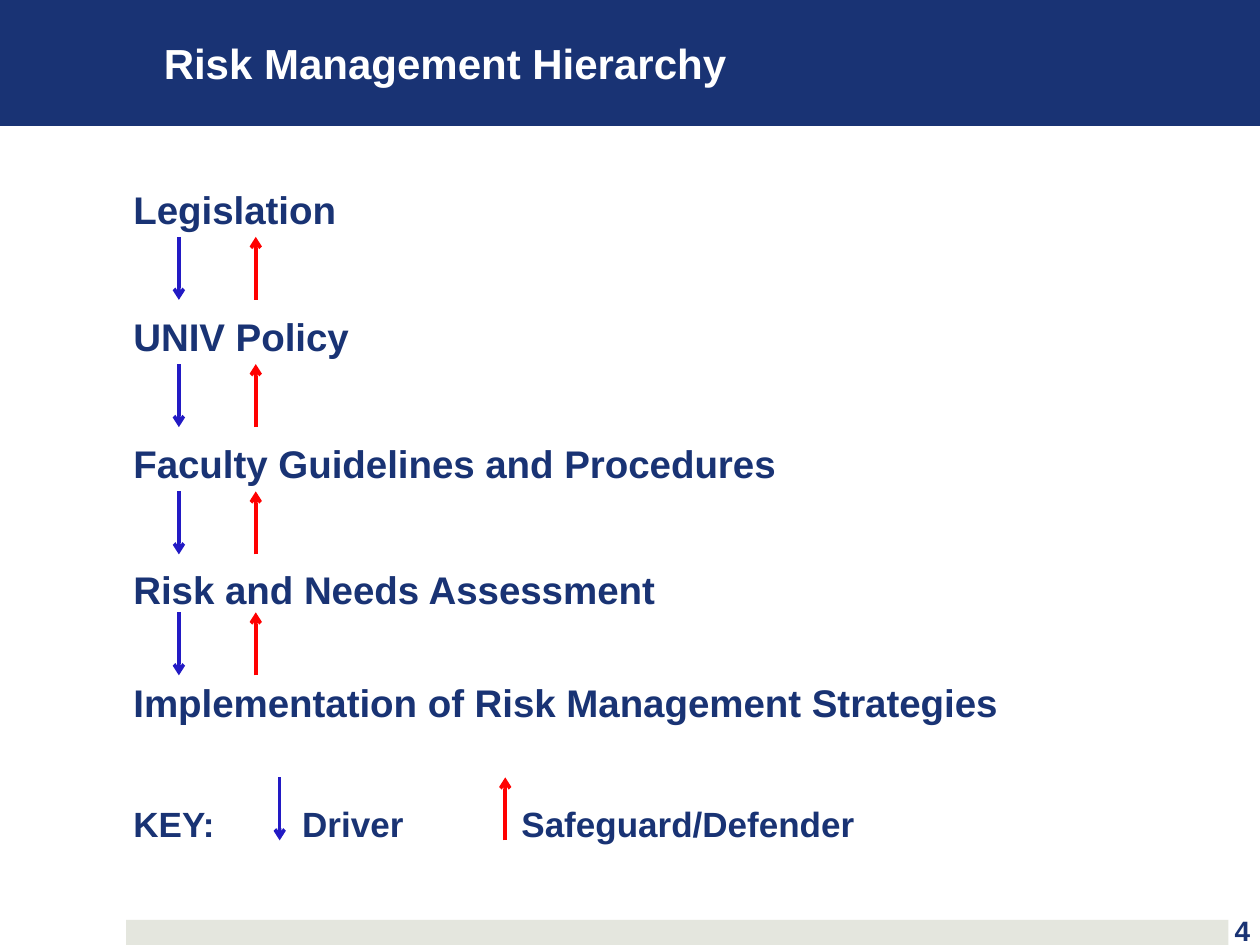
from dataclasses import dataclass

from lxml.etree import SubElement
from pptx import Presentation
from pptx.dml.color import RGBColor
from pptx.enum.shapes import MSO_CONNECTOR as Connector, MSO_SHAPE as Shape
from pptx.enum.text import MSO_ANCHOR as Anchor, PP_ALIGN as Align
from pptx.oxml.ns import qn
from pptx.util import Inches, Pt

# The grid is 10 columns by 7.5 rows of one inch
COLUMNS, ROWS = 10, 7.5
COLORS = {"navy": "193374", "white": "FFFFFF", "footer": "E4E6DE",
          "driver": "221AC4", "safeguard": "FF0000"}
FONT = "Arial"


@dataclass(frozen=True)
class Level:
    text: str
    size: float
    gap: float  # space above, in points


@dataclass(frozen=True)
class Arrow:
    column: float
    start: float
    end: float
    role: str


LEVELS = [
    Level("Legislation", 22, 0),
    Level("UNIV Policy", 22, 46),
    Level("Faculty Guidelines and Procedures", 22, 46),
    Level("Risk and Needs Assessment", 22, 46),
    Level("Implementation of Risk Management Strategies", 22, 38),
    Level("KEY:\tDriver\tSafeguard/Defender", 20, 44),
]
KEY_TABS = (1.34, 3.08)
ARROW_LENGTH = 0.5
GAP_ROWS = (1.88, 2.89, 3.9, 4.86)
KEY_ROW = 6.17


def rgb(name: str) -> RGBColor:
    return RGBColor.from_string(COLORS[name])


def add_text(paragraph, text: str, size: float, color: str) -> None:
    run = paragraph.add_run()
    run.text = text
    run.font.name, run.font.size, run.font.bold = FONT, Pt(size), True
    run.font.color.rgb = rgb(color)


def add_band(slide, left: float, top: float, width: float, height: float, color: str):
    band = slide.shapes.add_shape(
        Shape.RECTANGLE, Inches(left), Inches(top), Inches(width), Inches(height))
    band.shadow.inherit = False
    band.fill.solid()
    band.fill.fore_color.rgb = rgb(color)
    band.line.fill.background()
    return band


def add_frame(slide, left: float, top: float, width: float, height: float):
    frame = slide.shapes.add_textbox(
        Inches(left), Inches(top), Inches(width), Inches(height)).text_frame
    frame.word_wrap = True
    return frame


def add_arrow(slide, arrow: Arrow) -> None:
    line = slide.shapes.add_connector(
        Connector.STRAIGHT, Inches(arrow.column), Inches(arrow.start),
        Inches(arrow.column), Inches(arrow.end))
    line.line.color.rgb = rgb(arrow.role)
    line.line.width = Pt(2)
    SubElement(line.line._get_or_add_ln(), qn("a:tailEnd"), type="arrow")
    SubElement(line._element.spPr, qn("a:effectLst"))


def add_tabs(paragraph, positions) -> None:
    tabs = SubElement(paragraph._p.get_or_add_pPr(), qn("a:tabLst"))
    for position in positions:
        SubElement(tabs, qn("a:tab"), pos=str(Inches(position)), algn="l")


def main() -> None:
    deck = Presentation()
    deck.slide_width, deck.slide_height = Inches(COLUMNS), Inches(ROWS)
    slide = deck.slides.add_slide(deck.slide_layouts[6])

    # Footer band and title band
    add_band(slide, 1, ROWS - 0.2, 8.75, 0.2, "footer")
    title = add_band(slide, 0, 0, COLUMNS, 1, "navy").text_frame
    title.margin_left, title.margin_right = Inches(1.3), Inches(0.3)
    title.vertical_anchor = Anchor.MIDDLE
    title.paragraphs[0].alignment = Align.LEFT
    add_text(title.paragraphs[0], "Risk Management Hierarchy", 24, "white")

    # Hierarchy levels, with the key as the last line
    hierarchy = add_frame(slide, 0.96, 1.43, 8.32, 5.35)
    for index, level in enumerate(LEVELS):
        paragraph = hierarchy.add_paragraph() if index else hierarchy.paragraphs[0]
        paragraph.space_before = Pt(level.gap)
        add_text(paragraph, level.text, level.size, "navy")
    add_tabs(paragraph, KEY_TABS)

    # Drivers point down and safeguards up, one pair per gap and one in the key
    pairs = [(row, 1.42, 2.03) for row in GAP_ROWS]
    pairs.append((KEY_ROW, 2.22, 4.01))
    for top, driver_column, safeguard_column in pairs:
        bottom = top + ARROW_LENGTH
        add_arrow(slide, Arrow(driver_column, top, bottom, "driver"))
        add_arrow(slide, Arrow(safeguard_column, bottom, top, "safeguard"))

    # Page number
    number = add_frame(slide, 9.61, 7.18, 0.5, 0.4)
    number.vertical_anchor = Anchor.MIDDLE
    number.paragraphs[0].alignment = Align.CENTER
    add_text(number.paragraphs[0], "4", 16, "navy")

    deck.save("out.pptx")


if __name__ == "__main__":
    main()
